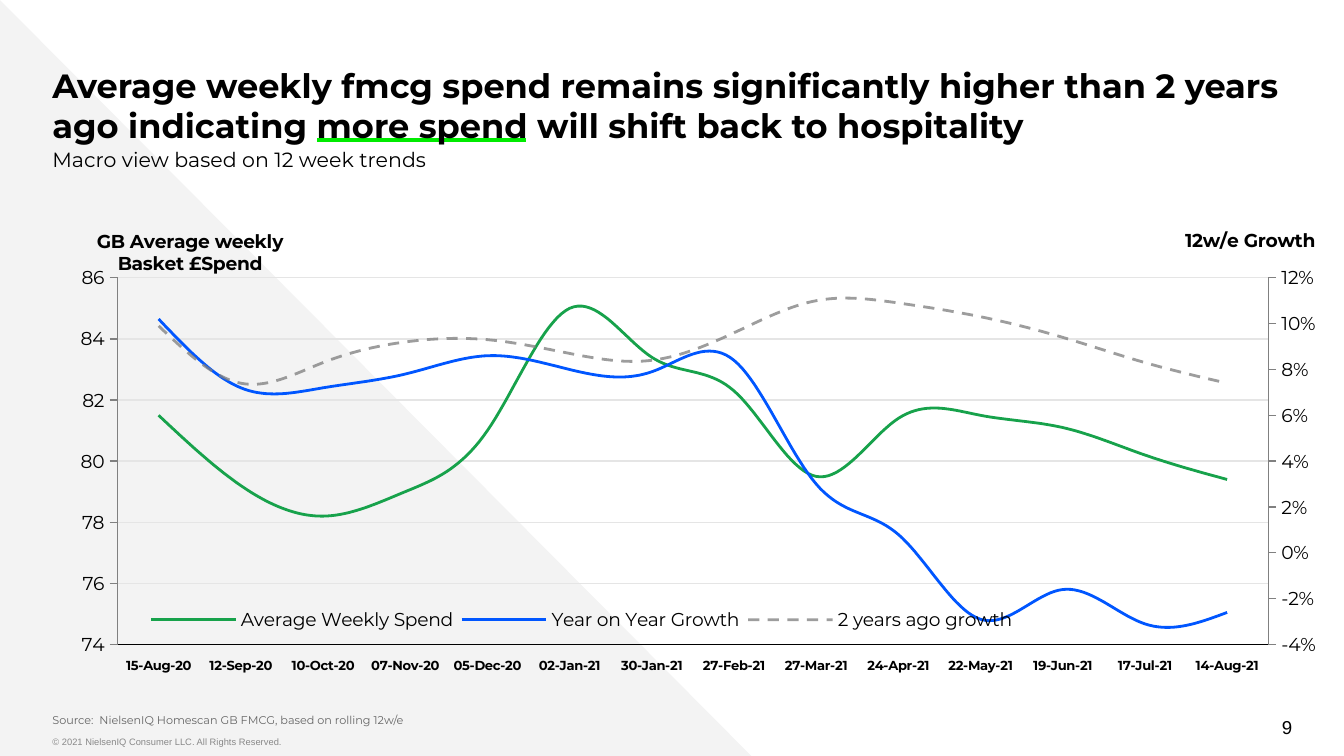
"""Build the weekly fmcg spend slide with a two-axis line chart."""
from copy import deepcopy
from dataclasses import dataclass

from lxml import etree
from pptx import Presentation
from pptx.chart.axis import ValueAxis
from pptx.chart.data import CategoryChartData
from pptx.dml.color import RGBColor as RGB
from pptx.enum.chart import XL_CHART_TYPE as CT, XL_LEGEND_POSITION as LP
from pptx.enum.chart import XL_TICK_LABEL_POSITION as TLP, XL_TICK_MARK as TM
from pptx.enum.dml import MSO_LINE
from pptx.enum.shapes import MSO_CONNECTOR, MSO_SHAPE
from pptx.enum.text import MSO_ANCHOR as MA, MSO_AUTO_SIZE, PP_ALIGN as AL
from pptx.oxml.ns import qn
from pptx.util import Cm, Pt


@dataclass(frozen=True)
class Theme:
    font: str = "Montserrat"
    plain: str = "Arial"
    black: RGB = RGB(0, 0, 0)
    wedge: RGB = RGB(0xF3, 0xF3, 0xF3)
    accent: RGB = RGB(0, 0xEB, 0)
    source: RGB = RGB(0x66, 0x66, 0x66)
    legal: RGB = RGB(0x88, 0x88, 0x88)
    grid: RGB = RGB(0xE5, 0xE5, 0xE5)
    green: RGB = RGB(0x17, 0xA2, 0x4B)
    blue: RGB = RGB(0, 0x56, 0xFF)
    gray: RGB = RGB(0x80, 0x80, 0x80)
    title: Pt = Pt(18)
    subhead: Pt = Pt(11)
    label: Pt = Pt(10)
    dates: Pt = Pt(7)
    note: Pt = Pt(6)
    small: Pt = Pt(5)


T = Theme()


def write(sp, box, text, size, color, font=T.font, bold=False,
          align=AL.LEFT, anchor=MA.TOP, insets=(0, 0.25)):
    sp.left, sp.top, sp.width, sp.height = [Cm(v) for v in box]
    tf = sp.text_frame
    tf.word_wrap, tf.auto_size, tf.vertical_anchor = True, MSO_AUTO_SIZE.NONE, anchor
    tf.margin_left = tf.margin_right = Cm(insets[0])
    tf.margin_top = tf.margin_bottom = Cm(insets[1])
    tf.text = text
    p = tf.paragraphs[0]
    p.alignment, p.space_before = align, Pt(0)
    f = p.runs[0].font
    f.name, f.size, f.bold, f.color.rgb = font, size, bold, color


def place(parent, **spots):
    for old in parent.findall(qn("c:layout")):
        parent.remove(old)
    layout = etree.Element(qn("c:layout"))
    manual = etree.SubElement(layout, qn("c:manualLayout"))
    for tag, val in spots.items():
        etree.SubElement(manual, qn("c:" + tag)).set("val", str(val))
    overlay = parent.find(qn("c:overlay"))
    if overlay is None:
        parent.insert(0, layout)
    else:
        overlay.addprevious(layout)


prs = Presentation()
prs.slide_width, prs.slide_height = Cm(25.4), Cm(14.29)
s = prs.slides.add_slide(prs.slide_layouts[0])
title, source = s.placeholders

wedge = s.shapes.add_shape(MSO_SHAPE.RIGHT_TRIANGLE, 0, 0, Cm(14.2), Cm(14.29))
wedge.shadow.inherit = False
wedge.fill.solid()
wedge.fill.fore_color.rgb = T.wedge
wedge.line.fill.background()
s.shapes._spTree.insert(2, wedge._element)

rule = s.shapes.add_connector(MSO_CONNECTOR.STRAIGHT, Cm(6), Cm(2.65), Cm(9.95), Cm(2.65))
rule.line.color.rgb, rule.line.width = T.accent, Pt(2.25)
etree.SubElement(rule._element.spPr, qn("a:effectLst"))
title._element.addprevious(rule._element)

write(title, (0.99, 0.98, 24.5, 1.83),
      "Average weekly fmcg spend remains significantly higher than 2 years ago "
      "indicating more spend will shift back to hospitality", T.title, T.black, bold=True)
write(source, (0.99, 13.49, 22.65, 0.5),
      "Source:  NielsenIQ Homescan GB FMCG, based on rolling 12w/e",
      T.note, T.source, anchor=MA.BOTTOM)
legal, number, subhead = [s.shapes.add_textbox(0, 0, 0, 0) for _ in range(3)]
write(legal, (0.99, 13.79, 14.07, 0.5), "© 2021 NielsenIQ Consumer LLC. All Rights Reserved.",
      T.small, T.legal, T.plain, insets=(0, 0.13))
write(number, (18.7, 13.36, 5.72, 0.76), "9", T.label, T.black, T.plain,
      align=AL.RIGHT, anchor=MA.MIDDLE, insets=(0, 0.13))
write(subhead, (0.74, 2.64, 12.7, 0.74), "Macro view based on 12 week trends",
      T.subhead, T.black, insets=(0.25, 0.13))

data = CategoryChartData()
data.categories = ["15-Aug-20", "12-Sep-20", "10-Oct-20", "07-Nov-20", "05-Dec-20",
                   "02-Jan-21", "30-Jan-21", "27-Feb-21", "27-Mar-21", "24-Apr-21",
                   "22-May-21", "19-Jun-21", "17-Jul-21", "14-Aug-21"]
data.add_series("Average Weekly Spend",
                [81.5, 79.2, 78.2, 79, 81, 85, 83.4, 82.3, 79.5, 81.4,
                 81.5, 81.1, 80.2, 79.4], "0")
data.add_series("Year on Year Growth",
                [0.102, 0.072, 0.072, 0.078, 0.086, 0.08, 0.079, 0.084, 0.03, 0.008,
                 -0.029, -0.016, -0.031, -0.026], "0%")
data.add_series("2 years ago growth",
                [0.099, 0.074, 0.083, 0.092, 0.093, 0.087, 0.084, 0.096, 0.11, 0.109,
                 0.103, 0.094, 0.083, 0.074], "0%")
chart = s.shapes.add_chart(CT.LINE, Cm(1.52), Cm(3.94), Cm(23.4), Cm(9.37), data).chart
s.shapes._spTree.append(subhead._element)
chart.has_title = False
chart.font.name, chart.font.size, chart.font.color.rgb = T.font, T.label, T.black

for series, color in zip(chart.plots[0].series, (T.green, T.blue, T.gray)):
    series.smooth = True
    series.format.line.color.rgb, series.format.line.width = color, Pt(1.5)
series.format.line.dash_style = MSO_LINE.DASH
tint = series._element.find(".//" + qn("a:srgbClr"))
etree.SubElement(tint, qn("a:alpha")).set("val", "76000")

plot = chart.plots[0]._element
growth = deepcopy(plot)
plot.addnext(growth)
for group, moved in ((plot, slice(1, 3)), (growth, slice(0, 1))):
    for ser in group.findall(qn("c:ser"))[moved]:
        group.remove(ser)
    group.find(qn("c:varyColors")).set("val", "0")

dates, spend = chart.category_axis, chart.value_axis
right_cat, right_val = deepcopy(dates._element), deepcopy(spend._element)
spend._element.addnext(right_val)
right_val.addnext(right_cat)
ids = [a.get("val") for a in plot.findall(qn("c:axId"))]
swap = dict(zip(ids, ("5001", "5002")))
for part in (growth, right_cat, right_val):
    for tag in ("c:axId", "c:crossAx"):
        for ref in part.findall(qn(tag)):
            ref.set("val", swap[ref.get("val")])
right_cat.find(qn("c:delete")).set("val", "1")
right_val.find(qn("c:axPos")).set("val", "r")
right_val.find(qn("c:crosses")).set("val", "max")

dates.tick_label_position = TLP.LOW
dates.major_tick_mark = dates.minor_tick_mark = TM.NONE
dates.format.line.color.rgb, dates.format.line.width = T.black, Pt(0.75)
f = dates.tick_labels.font
f.name, f.size, f.bold, f.color.rgb = T.font, T.dates, True, T.black

for axis, text, low, high, step, fmt, x in (
        (spend, "GB Average weekly\nBasket £Spend", 74, 86, 2, "0", 0.01),
        (ValueAxis(right_val), "12w/e Growth", -0.04, 0.12, 0.02, "0%", 0.89)):
    axis.minimum_scale, axis.maximum_scale, axis.major_unit = low, high, step
    axis.has_major_gridlines = axis is spend
    axis.major_tick_mark, axis.minor_tick_mark = TM.OUTSIDE, TM.NONE
    axis.format.line.color.rgb, axis.format.line.width = T.gray, Pt(0.75)
    labels = axis.tick_labels
    labels.number_format, labels.number_format_is_linked = fmt, False
    labels.font.name, labels.font.size, labels.font.color.rgb = T.font, T.label, T.black
    tf = axis.axis_title.text_frame
    tf.text = text
    for p in tf.paragraphs:
        p.alignment = AL.CENTER
        f = p.runs[0].font
        f.name, f.size, f.bold, f.color.rgb = T.font, T.label, True, T.black
    head = axis.axis_title._element
    turn = head.find(".//" + qn("a:bodyPr"))
    turn.set("rot", "0")
    turn.set("vert", "horz")
    place(head, xMode="edge", yMode="edge", x=x, y=0.03)
grid = spend.major_gridlines.format.line
grid.color.rgb, grid.width = T.grid, Pt(0.75)

chart.has_legend = True
legend = chart.legend
legend.position, legend.include_in_layout = LP.BOTTOM, True
legend.font.name, legend.font.size, legend.font.color.rgb = T.font, T.label, T.black
place(legend._element, xMode="edge", yMode="edge", x=0.05, y=0.8, w=0.71, h=0.06)
place(plot.getparent(), layoutTarget="inner", xMode="edge", yMode="edge",
      x=0.03, y=0.14, w=0.93, h=0.74)

prs.save("out.pptx")
